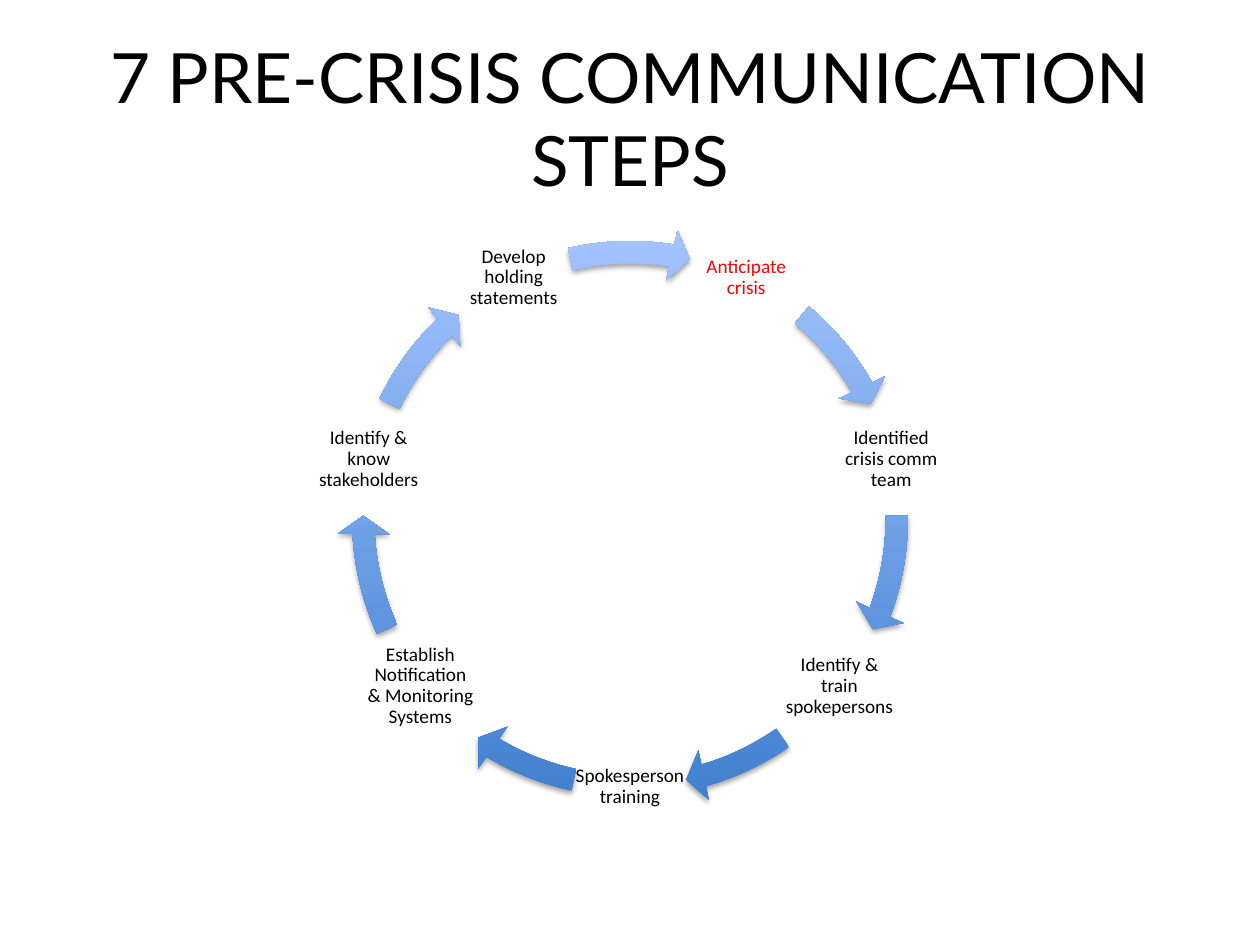
import math
import pptx
import pptx.util
import pptx.oxml
import pptx.oxml.ns
from pptx.dml.color import RGBColor
from pptx.enum.shapes import MSO_SHAPE
from pptx.enum.text import MSO_ANCHOR, MSO_AUTO_SIZE, PP_ALIGN

# Content: step, text colour, start and end angle of the arrow after it
TITLE = "7 PRE-CRISIS COMMUNICATION STEPS"
STEPS = [
    ("Anticipate crisis", "red", 310.1, 330.44),
    ("Identified crisis comm team", "black", 359.3, 20.49),
    ("Identify & train spokepersons", "black", 55.14, 73.95),
    ("Spokesperson training", "black", 102.14, 120.95),
    ("Establish Notification & Monitoring Systems", "black", 155.59, 176.79),
    ("Identify & know stakeholders", "black", 205.64, 225.98),
    ("Develop holding statements", "black", 257.08, 279.01),
]
COLORS = {"black": "000000", "red": "FF0000", "low": "3F7FCE", "high": "A4C4FF"}

# Layout in px
MID_X, MID_Y = 630, 519
RADIUS, RING, BOX = 268, 585, 113
SCALE = 914400 / 126
SHADOW = (
    '<a:outerShdw xmlns:a="http://schemas.openxmlformats.org/drawingml/2006/main"'
    ' blurRad="39370" dist="22860" dir="5400000" rotWithShape="0">'
    '<a:srgbClr val="000000"><a:alpha val="35000"/></a:srgbClr></a:outerShdw>'
)


def px(num):
    return pptx.util.Emu(round(num * SCALE))


def color(name):
    return RGBColor.from_string(COLORS[name])


def square(x, y, side):
    return px(x - side / 2), px(y - side / 2), px(side), px(side)


def style(frame, text, font, size, tint):
    frame.text = text
    frame.word_wrap = True
    frame.auto_size = MSO_AUTO_SIZE.NONE
    frame.vertical_anchor = MSO_ANCHOR.MIDDLE
    para = frame.paragraphs[0]
    para.alignment = PP_ALIGN.CENTER
    face = para.runs[0].font
    face.name, face.size = font, pptx.util.Pt(size)
    face.color.rgb = color(tint)


def add_label(group, turn, text, tint):
    x = MID_X + RADIUS * math.sin(turn)
    y = MID_Y - RADIUS * math.cos(turn)
    frame = group.shapes.add_textbox(*square(x, y, BOX)).text_frame
    style(frame, text, "Calibri", 11, tint)
    frame.margin_left = frame.margin_right = px(2)
    frame.margin_top = frame.margin_bottom = px(2)
    frame.paragraphs[0].line_spacing = 0.9


def add_arrow(group, start, end):
    arrow = group.shapes.add_shape(
        MSO_SHAPE.CIRCULAR_ARROW, *square(MID_X, MID_Y, RING))
    # Angles are stored in 60000ths of a degree, adjustments in 100000ths
    values = (0.038, 2.35, end * 0.6, start * 0.6, 0.044)
    for i, value in enumerate(values):
        arrow.adjustments[i] = value
    arrow.fill.gradient()
    arrow.fill.gradient_angle = 90
    for stop, name in zip(arrow.fill.gradient_stops, ("low", "high")):
        stop.color.rgb = color(name)
    arrow.line.fill.background()
    arrow.shadow.inherit = False
    effects = arrow.element.spPr.find(pptx.oxml.ns.qn("a:effectLst"))
    effects.append(pptx.oxml.parse_xml(SHADOW))


def main():
    deck = pptx.Presentation()
    deck.slide_width, deck.slide_height = px(1260), px(945)
    slide = deck.slides.add_slide(deck.slide_layouts[5])

    # Title
    title = slide.shapes.title
    title.left, title.top, title.width, title.height = map(px, (63, 38, 1134, 158))
    style(title.text_frame, TITLE, "Lato", 39.6, "black")

    # Cycle: labels evenly spaced on a circle, each followed by an arrow
    group = slide.shapes.add_group_shape()
    for i, (text, tint, start, end) in enumerate(STEPS):
        add_label(group, (i + 0.5) * math.tau / len(STEPS), text, tint)
        add_arrow(group, start, end)

    deck.save("out.pptx")


if __name__ == "__main__":
    main()
